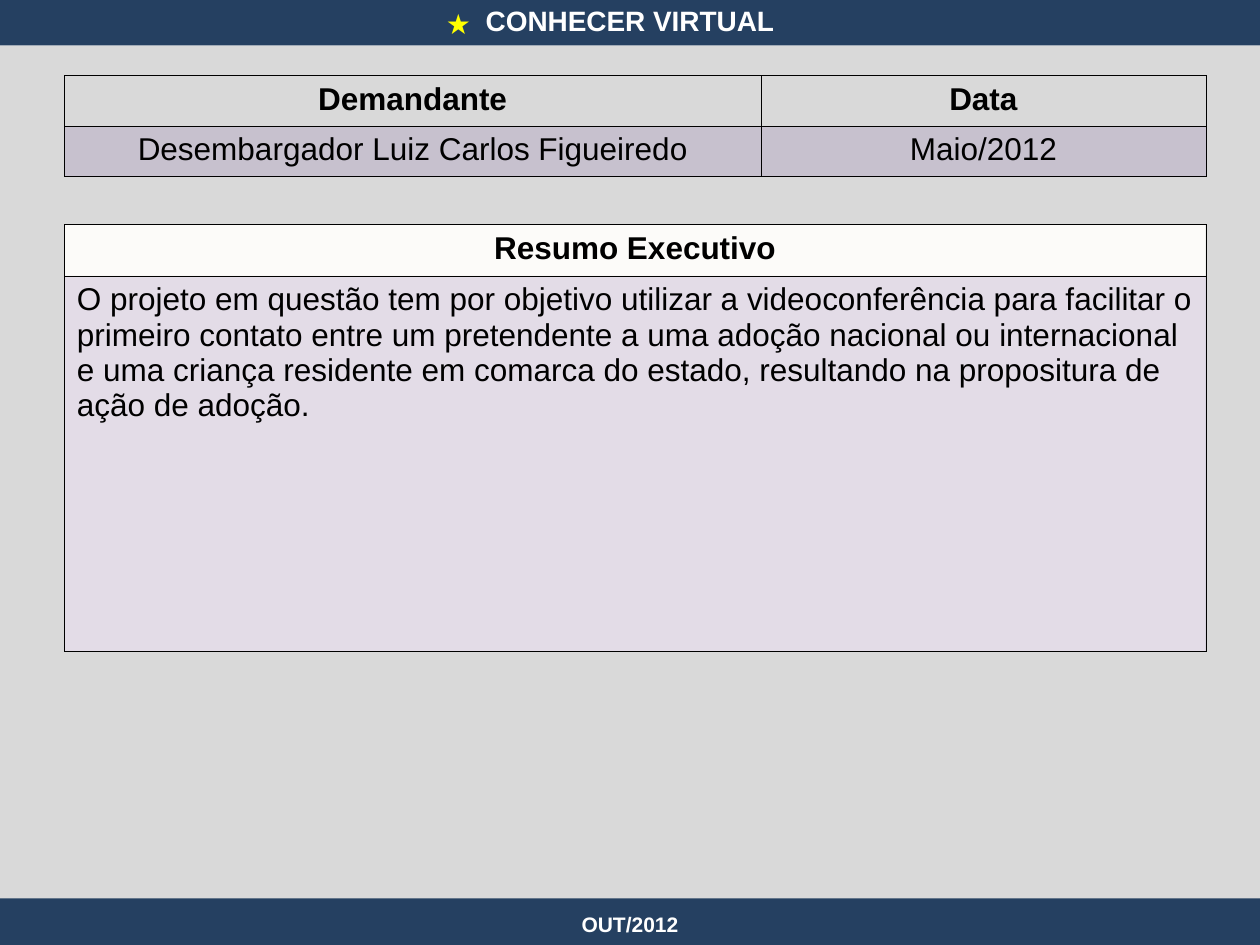
from lxml.etree import SubElement
from pptx import Presentation
from pptx.dml.color import RGBColor
from pptx.enum.shapes import MSO_SHAPE as SHAPE
from pptx.enum.text import MSO_ANCHOR as ANCHOR, PP_ALIGN as ALIGN
from pptx.oxml import parse_xml
from pptx.oxml.ns import nsdecls, qn
from pptx.util import Inches, Pt

NAVY = RGBColor(0x25, 0x40, 0x61)
GRAY = RGBColor(0xD9, 0xD9, 0xD9)
IVORY = RGBColor(0xFC, 0xFB, 0xF9)
PURPLE = RGBColor(0x80, 0x64, 0xA2)
YELLOW = RGBColor(0xFF, 0xFF, 0x00)
WHITE = RGBColor(0xFF, 0xFF, 0xFF)
BLACK = RGBColor(0, 0, 0)

LEFT, WIDTH = 0.51, 9.06
SUMMARY = (
    "O projeto em questão tem por objetivo utilizar a videoconferência para "
    "facilitar o primeiro contato entre um pretendente a uma adoção nacional "
    "ou internacional e uma criança residente em comarca do estado, "
    "resultando na propositura de ação de adoção."
)


def write(tf, text, size=18, color=BLACK, bold=False, align=ALIGN.CENTER, shadow=False):
    """Write one formatted paragraph into a text frame."""
    tf.word_wrap = True
    p = tf.paragraphs[0]
    p.alignment = align
    r = p.add_run()
    r.text = text
    r.font.size, r.font.bold = Pt(size), bold
    r.font.color.rgb = color
    if shadow:
        r.font._element.append(parse_xml(
            f'<a:effectLst {nsdecls("a")}><a:outerShdw blurRad="38100" dist="38100" '
            'dir="2700000" algn="tl"><a:srgbClr val="000000"><a:alpha val="43000"/>'
            '</a:srgbClr></a:outerShdw></a:effectLst>'))
    r.font.name = "Arial"


def add_panel(slide, box, color):
    """Add a plain filled rectangle."""
    sp = slide.shapes.add_shape(SHAPE.RECTANGLE, *map(Inches, box))
    sp.shadow.inherit = False
    sp.fill.solid()
    sp.fill.fore_color.rgb = color
    sp.line.fill.background()


def add_label(slide, box, text, **fmt):
    """Add a vertically centred text box."""
    tf = slide.shapes.add_textbox(*map(Inches, box)).text_frame
    tf.vertical_anchor = ANCHOR.MIDDLE
    write(tf, text, **fmt)


def add_borders(cell):
    """Draw thin black lines on the four sides of a cell."""
    tc_pr = cell._tc.get_or_add_tcPr()
    for i, side in enumerate("LRTB"):
        ln = parse_xml(f'<a:ln{side} {nsdecls("a")} w="3175"><a:solidFill>'
                       f'<a:srgbClr val="{BLACK}"/></a:solidFill></a:ln{side}>')
        tc_pr.insert(i, ln)


def add_grid(slide, box, cols, heights, rows, body_align=ALIGN.CENTER):
    """Add a table with a bold clear header and a translucent purple body."""
    table = slide.shapes.add_table(len(rows), len(cols), *map(Inches, box)).table
    table.first_row = table.horz_banding = False
    for col, width in zip(table.columns, cols):
        col.width = Inches(width)
    for i, (row, height, texts) in enumerate(zip(table.rows, heights, rows)):
        row.height = Inches(height)
        header = i == 0
        for cell, text in zip(row.cells, texts):
            write(cell.text_frame, text, bold=header,
                  align=ALIGN.CENTER if header else body_align)
            if header:
                cell.fill.background()
            else:
                cell.fill.solid()
                cell.fill.fore_color.rgb = PURPLE
                color = cell._tc.tcPr.find(".//" + qn("a:srgbClr"))
                SubElement(color, qn("a:alpha"), val="20000")
            add_borders(cell)


def add_frame(slide, box):
    """Add the gray page with its navy bands, title, star and footer."""
    x, y, w, h = box
    band = 0.37
    foot = y + h - band
    add_panel(slide, (x, y + 0.36, w, 6.85), GRAY)
    add_panel(slide, (x, foot, w, band), NAVY)
    add_panel(slide, (x, y - 0.01, w, band), NAVY)
    add_label(slide, (x, foot + 0.01, w, 0.39), "OUT/2012",
              size=12, color=WHITE, bold=True, shadow=True)
    title = slide.shapes.title
    title.left, title.top, title.width, title.height = map(Inches, (x, y - 0.11, w, 0.55))
    title.text_frame.vertical_anchor = ANCHOR.MIDDLE
    write(title.text_frame, "CONHECER VIRTUAL", size=16, color=WHITE, bold=True, shadow=True)
    slide.shapes._spTree.append(title._element)
    add_label(slide, (x + 3.44, y, 0.47, band), "★",
              size=16, color=YELLOW, align=ALIGN.LEFT)


def add_request(slide, box):
    """Add the table with requester and date."""
    add_grid(slide, box, (5.53, 3.53), (0.4, 0.4),
             [("Demandante", "Data"),
              ("Desembargador Luiz Carlos Figueiredo", "Maio/2012")])


def add_summary(slide, box):
    """Add the executive summary on its ivory panel."""
    add_panel(slide, box, IVORY)
    add_grid(slide, box, (box[2],), (0.41, box[3] - 0.41),
             [("Resumo Executivo",), (SUMMARY,)], body_align=ALIGN.LEFT)


def main():
    """Build the slide and save it."""
    prs = Presentation()
    prs.slide_width, prs.slide_height = Inches(10), Inches(7.5)
    slide = prs.slides.add_slide(prs.slide_layouts[5])
    add_frame(slide, (0, 0, 10, 7.5))
    add_request(slide, (LEFT, 0.6, WIDTH, 0.8))
    add_summary(slide, (LEFT, 1.78, WIDTH, 3.39))
    prs.save("out.pptx")


if __name__ == "__main__":
    main()
